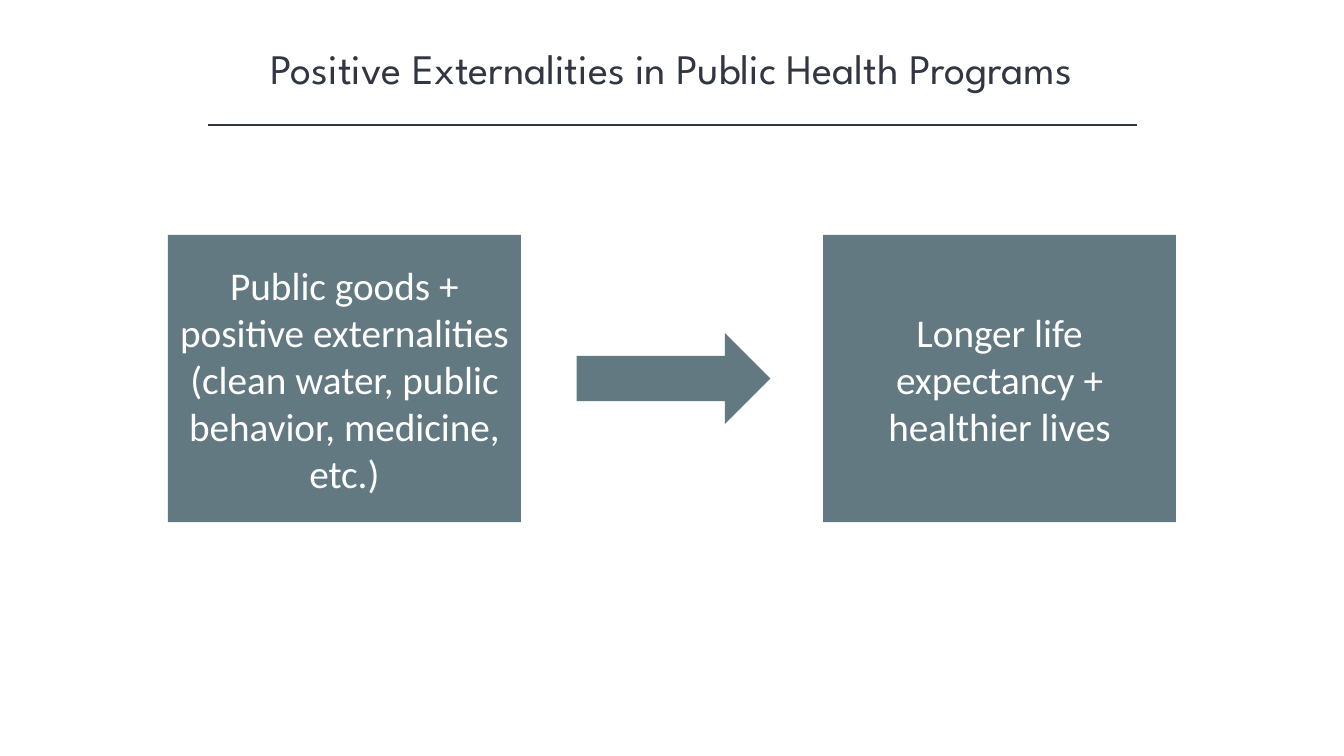
"""Build the slide on positive externalities in public health programs."""
from lxml.etree import SubElement
from pptx import Presentation
from pptx.dml.color import RGBColor
from pptx.enum.shapes import MSO_CONNECTOR, MSO_SHAPE
from pptx.enum.text import MSO_ANCHOR, MSO_AUTO_SIZE, PP_ALIGN
from pptx.oxml.ns import qn
from pptx.util import Inches, Pt

HEADING = "Positive Externalities in Public Health Programs"
CAUSE = "Public goods + positive externalities (clean water, public behavior, medicine, etc.)"
EFFECT = "Longer life expectancy + healthier lives"
INK, SLATE, WHITE = "323542", "627981", "FFFFFF"

WIDTH, HEIGHT = 13.33, 7.5
MARGIN = WIDTH / 8
BOX_TOP, BOX_WIDTH, BOX_HEIGHT = 2.33, 3.5, 2.85
ARROW_LEFT, ARROW_WIDTH, ARROW_HEIGHT = 5.72, 1.92, 0.9
RULE_LEFT, RULE_RIGHT, RULE_Y = 2.06, 11.28, 1.24


def color(value):
    return RGBColor.from_string(value)


def write(frame, text, font, size, ink, anchor):
    frame.word_wrap = True
    frame.vertical_anchor = anchor
    frame.text = text
    paragraph = frame.paragraphs[0]
    paragraph.alignment = PP_ALIGN.CENTER
    run = paragraph.runs[0]
    run.font.name = font
    run.font.size = Pt(size)
    run.font.color.rgb = color(ink)


def add_block(slide, preset, left, top, width, height):
    block = slide.shapes.add_shape(preset, *map(Inches, (left, top, width, height)))
    block.shadow.inherit = False
    block.fill.solid()
    block.fill.fore_color.rgb = color(SLATE)
    block.line.fill.background()
    return block


def main():
    deck = Presentation()
    deck.slide_width, deck.slide_height = Inches(WIDTH), Inches(HEIGHT)
    slide = deck.slides.add_slide(deck.slide_layouts[5])

    heading = slide.shapes.title
    heading.left, heading.top = Inches(MARGIN), Inches(0.37)
    heading.width, heading.height = Inches(WIDTH - 2 * MARGIN), Inches(0.61)
    write(heading.text_frame, HEADING, "League Spartan", 30, INK, MSO_ANCHOR.TOP)
    heading.text_frame.auto_size = MSO_AUTO_SIZE.SHAPE_TO_FIT_TEXT

    rule = slide.shapes.add_connector(
        MSO_CONNECTOR.STRAIGHT, *map(Inches, (RULE_LEFT, RULE_Y, RULE_RIGHT, RULE_Y)))
    rule.line.color.rgb = color(INK)
    rule.line.width = Pt(1)
    SubElement(rule._element.spPr, qn("a:effectLst"))

    arrow_top = BOX_TOP + (BOX_HEIGHT - ARROW_HEIGHT) / 2
    add_block(slide, MSO_SHAPE.RIGHT_ARROW, ARROW_LEFT, arrow_top, ARROW_WIDTH, ARROW_HEIGHT)
    for text, left in ((CAUSE, MARGIN), (EFFECT, WIDTH - MARGIN - BOX_WIDTH)):
        box = add_block(slide, MSO_SHAPE.RECTANGLE, left, BOX_TOP, BOX_WIDTH, BOX_HEIGHT)
        write(box.text_frame, text, "Calibri", 28, WHITE, MSO_ANCHOR.MIDDLE)

    deck.save("out.pptx")


if __name__ == "__main__":
    main()
